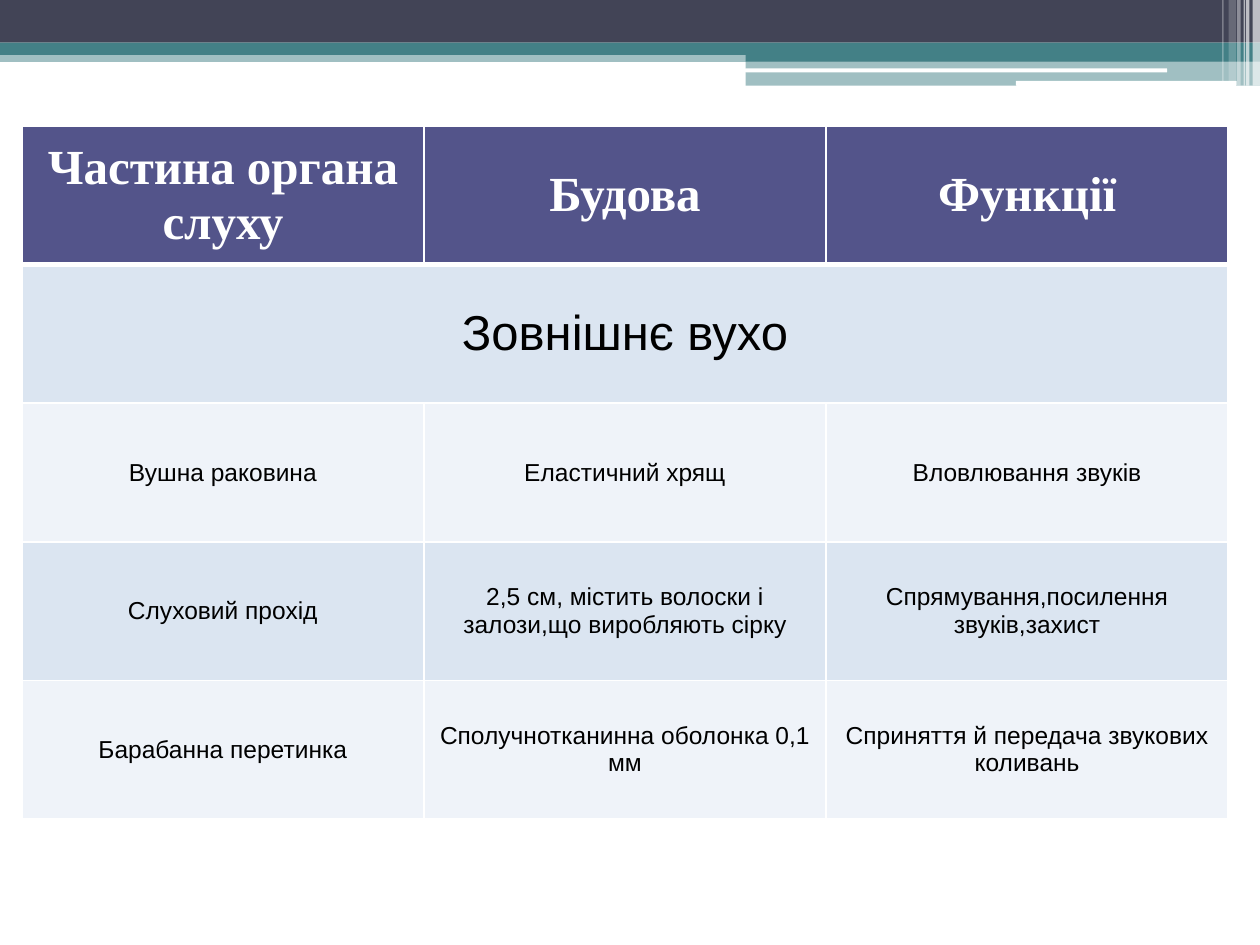
from lxml import etree
from pptx import Presentation
from pptx.dml.color import RGBColor
from pptx.enum.shapes import MSO_SHAPE
from pptx.enum.text import MSO_ANCHOR, PP_ALIGN
from pptx.oxml.ns import qn
from pptx.util import Cm, Pt

RECT, ROUND = MSO_SHAPE.RECTANGLE, MSO_SHAPE.ROUNDED_RECTANGLE
CENTER, MIDDLE = PP_ALIGN.CENTER, MSO_ANCHOR.MIDDLE
COLORS = {
    "dark": "424456",
    "teal": "438086",
    "white": "FFFFFF",
    "header": "53548A",
    "band": "DBE5F1",
    "plain": "EFF3F9",
    "text": "000000",
}
BANDS = [
    (0, 1.02, 25.4, 0.23, "teal", 50),
    (0, 0, 25.4, 0.86, "dark", 100),
    (0, 0.86, 25.4, 0.25, "teal", 100),
    (15.03, 0.99, 10.37, 0.25, "teal", 100),
    (15.03, 1.23, 10.37, 0.5, "teal", 50),
]
RULES = [(15.02, 1.38, 8.51, 0.08), (20.48, 1.63, 4.45, 0.1)]
STRIPES = [
    (25.25, 0.15, 1.73, 65),
    (25.12, 0.07, 1.73, 65),
    (25.07, 0.03, 1.73, 60),
    (24.94, 0.07, 1.73, 40),
    (24.77, 0.15, 1.63, 20),
    (24.64, 0.03, 1.63, 30),
]
ROWS = [
    ["Частина органа слуху", "Будова", "Функції"],
    ["Зовнішнє вухо"],
    ["Вушна раковина", "Еластичний хрящ", "Вловлювання звуків"],
    ["Слуховий прохід", "2,5 см, містить волоски і залози,що виробляють сірку",
     "Спрямування,посилення звуків,захист"],
    ["Барабанна перетинка", "Сполучнотканинна оболонка 0,1 мм",
     "Сприняття й передача звукових коливань"],
]


def rgb(name):
    """Return the named palette colour."""
    return RGBColor.from_string(COLORS[name])


def add_bar(s, x, y, w, h, color, opacity=100, kind=RECT):
    """Add a borderless bar, measured in centimetres."""
    sp = s.shapes.add_shape(kind, Cm(x), Cm(y), Cm(w), Cm(h))
    sp.shadow.inherit = False
    sp.line.fill.background()
    sp.fill.solid()
    sp.fill.fore_color.rgb = rgb(color)
    if opacity < 100:
        clr = sp.fill._xPr.find(".//" + qn("a:srgbClr"))
        etree.SubElement(clr, qn("a:alpha"), val=str(opacity * 1000))


def add_banner(s, left, top):
    """Draw the decorated top banner from the given corner."""
    for x, y, w, h, color, opacity in BANDS:
        add_bar(s, left + x, top + y, w, h, color, opacity)
    for x, y, w, h in RULES:
        add_bar(s, left + x, top + y, w, h, "white", kind=ROUND)
    for x, w, h, opacity in STRIPES:
        add_bar(s, left + x, top, w, h, "white", opacity)


def set_borders(cell, bottom_width):
    """Give a cell white borders with the chosen bottom width in points."""
    tc_pr = cell._tc.get_or_add_tcPr()
    widths = {"a:lnL": 1, "a:lnR": 1, "a:lnT": 1, "a:lnB": bottom_width}
    for i, (tag, width) in enumerate(widths.items()):
        ln = etree.Element(qn(tag), w=str(Pt(width)))
        fill = etree.SubElement(ln, qn("a:solidFill"))
        etree.SubElement(fill, qn("a:srgbClr"), val=COLORS["white"])
        tc_pr.insert(i, ln)


def format_cell(cell, row):
    """Style a cell by its row: header, section or body."""
    header = row == 0
    cell.fill.solid()
    cell.fill.fore_color.rgb = rgb("header" if header else "band" if row % 2 else "plain")
    cell.vertical_anchor = MIDDLE
    p = cell.text_frame.paragraphs[0]
    p.alignment = CENTER
    p.font.name = "Times New Roman" if header else "Arial"
    p.font.size = Pt(28 if row < 2 else 14)
    p.font.bold = header
    p.font.color.rgb = rgb("white" if header else "text")
    set_borders(cell, 3 if header else 1)


def add_ear_table(s, left, top, width, height):
    """Fill the given box with the table of ear parts."""
    n_cols = len(ROWS[0])
    table = s.shapes.add_table(len(ROWS), n_cols, Cm(left), Cm(top), Cm(width), Cm(height)).table
    for i, texts in enumerate(ROWS):
        for j, text in enumerate(texts):
            table.cell(i, j).text = text
        for j in range(n_cols):
            format_cell(table.cell(i, j), i)
        if len(texts) == 1:
            table.cell(i, 0).merge(table.cell(i, n_cols - 1))


def main():
    """Build and save the slide."""
    prs = Presentation()
    prs.slide_width, prs.slide_height = Cm(25.4), Cm(19.05)
    s = prs.slides.add_slide(prs.slide_layouts[6])
    add_banner(s, 0, 0)
    add_ear_table(s, 0.44, 2.54, 24.32, 13.97)
    prs.save("out.pptx")


if __name__ == "__main__":
    main()
